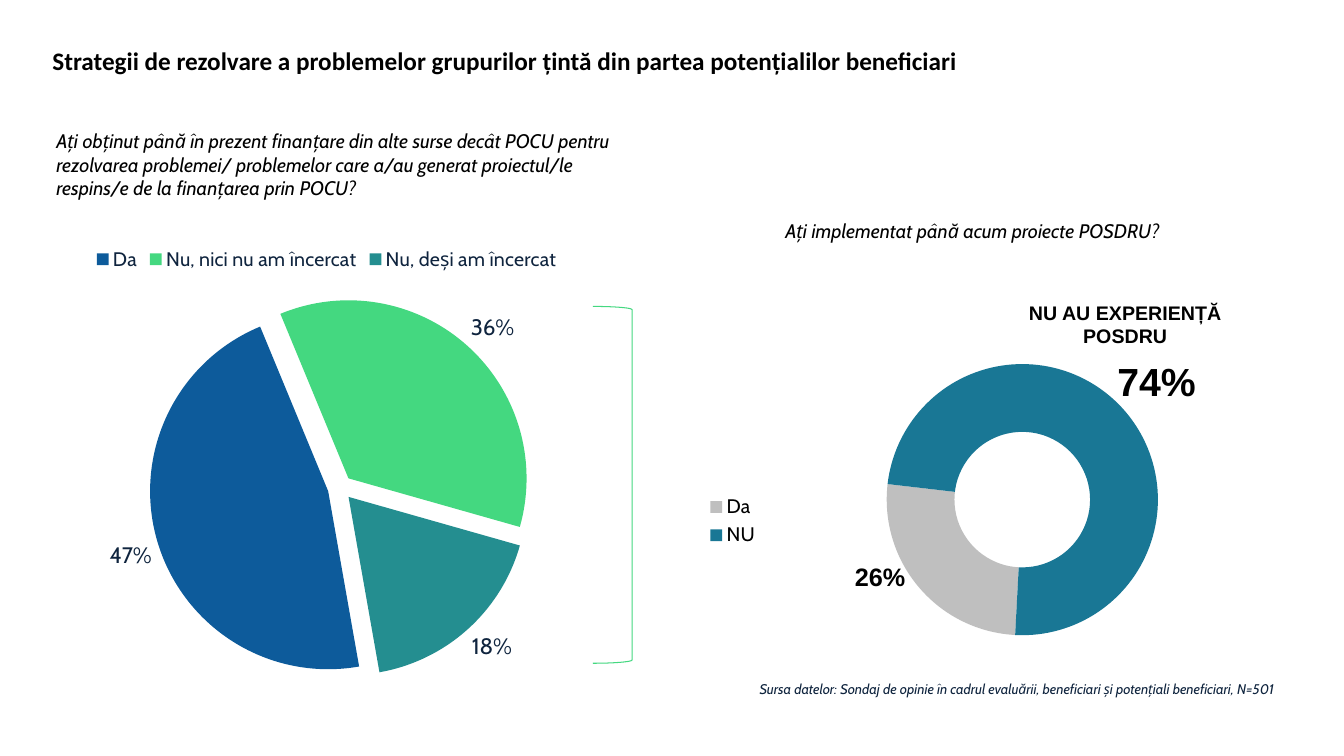
import dataclasses

import pptx
import pptx.chart.data
import pptx.dml.color
import pptx.enum.chart
import pptx.enum.shapes
import pptx.enum.text
import pptx.oxml
import pptx.oxml.ns
import pptx.util

PX = 9144
ALIGN = pptx.enum.text.PP_ALIGN
ANCHOR = pptx.enum.text.MSO_ANCHOR
LEGEND = pptx.enum.chart.XL_LEGEND_POSITION
CHART = pptx.enum.chart.XL_CHART_TYPE


@dataclasses.dataclass(frozen=True)
class Theme:
    black: str = "000000"
    navy: str = "0F243E"
    blue: str = "0D5B9B"
    green: str = "44D880"
    teal: str = "248E90"
    grey: str = "BFBFBF"
    petrol: str = "197795"
    body_font: str = "Cabin"
    title_font: str = "Calibri"
    callout_font: str = "Arial"
    note: int = 10
    body: int = 14
    label: int = 16
    title: int = 18
    big: int = 28


def px(*values):
    return [pptx.util.Emu(v * PX) for v in values]


def rgb(color):
    return pptx.dml.color.RGBColor.from_string(color)


def set_font(font, name, size, color, bold=False, italic=False):
    font.name = name
    font.size = pptx.util.Pt(size)
    font.color.rgb = rgb(color)
    font.bold = bold
    font.italic = italic


def write_text(tf, text, align=ALIGN.LEFT, **style):
    p = tf.paragraphs[0]
    p.alignment = align
    r = p.add_run()
    r.text = text
    set_font(r.font, **style)


def c_node(tag, inner="", **attrs):
    pairs = "".join(f' {k}="{v}"' for k, v in attrs.items())
    return pptx.oxml.parse_xml(
        f'<c:{tag} {pptx.oxml.ns.nsdecls("c")}{pairs}>{inner}</c:{tag}>')


class SlideBuilder:
    def __init__(self, prs, theme):
        self.theme = theme
        self.s = prs.slides.add_slide(prs.slide_layouts[6])

    def text(self, box, text, anchor=ANCHOR.TOP, inset=(10, 5), **style):
        tf = self.s.shapes.add_textbox(*px(*box)).text_frame
        tf.word_wrap = True
        tf.vertical_anchor = anchor
        tf.margin_left = tf.margin_right = px(inset[0])[0]
        tf.margin_top = tf.margin_bottom = px(inset[1])[0]
        write_text(tf, text, **style)

    def question(self, box, text):
        self.text(box, text, name=self.theme.body_font, size=self.theme.body,
                  color=self.theme.black, italic=True)

    def callout(self, box, text, size):
        self.text(box, text, anchor=ANCHOR.MIDDLE, inset=(0, 5), align=ALIGN.CENTER,
                  name=self.theme.callout_font, size=size,
                  color=self.theme.black, bold=True)

    def bracket(self, box, color):
        sp = self.s.shapes.add_shape(
            pptx.enum.shapes.MSO_SHAPE.RIGHT_BRACKET, *px(*box))
        sp.shadow.inherit = False
        sp.fill.background()
        sp.line.color.rgb = rgb(color)
        sp.line.width = pptx.util.Pt(0.75)

    def chart(self, kind, box, values, colors, start, legend, legend_color):
        data = pptx.chart.data.CategoryChartData()
        data.categories = list(values)
        data.add_series("Series 1", list(values.values()))
        chart = self.s.shapes.add_chart(kind, *px(*box), data).chart
        set_font(chart.font, self.theme.body_font, self.theme.note, self.theme.black)
        chart.has_title = False
        chart.has_legend = True
        chart.legend.position = legend
        chart.legend.include_in_layout = False
        set_font(chart.legend.font, self.theme.body_font, self.theme.body, legend_color)
        plot = chart.plots[0]
        plot.vary_by_categories = True
        plot.has_data_labels = False
        for i, color in enumerate(colors):
            fill = plot.series[0].points[i].format.fill
            fill.solid()
            fill.fore_color.rgb = rgb(color)
        group = chart._chartSpace.xpath("c:chart/c:plotArea/*[c:ser]")[0]
        for old in group.xpath("c:firstSliceAng | c:holeSize"):
            group.remove(old)
        group.append(c_node("firstSliceAng", val=start))
        return chart, group

    def pie(self, *args, explosion, **options):
        chart, group = self.chart(CHART.PIE, *args, **options)
        group.xpath("c:ser/c:dPt")[0].addprevious(c_node("explosion", val=explosion))
        labels = chart.plots[0].series[0].data_labels
        labels.show_value = True
        labels.number_format = "0%"
        labels.number_format_is_linked = False
        labels.position = pptx.enum.chart.XL_LABEL_POSITION.OUTSIDE_END
        set_font(labels.font, self.theme.body_font, self.theme.label, self.theme.navy)

    def doughnut(self, *args, hole, layout, **options):
        chart, group = self.chart(CHART.DOUGHNUT, *args, **options)
        group.append(c_node("holeSize", val=hole))
        area = group.getparent()
        for old in area.xpath("c:layout"):
            area.remove(old)
        modes = '<c:layoutTarget val="inner"/><c:xMode val="edge"/><c:yMode val="edge"/>'
        sizes = "".join(f'<c:{k} val="{v}"/>' for k, v in zip("xywh", layout))
        area.insert(0, c_node("layout", f"<c:manualLayout>{modes}{sizes}</c:manualLayout>"))


def main():
    prs = pptx.Presentation()
    prs.slide_width, prs.slide_height = px(1333, 750)
    t = Theme()
    s = SlideBuilder(prs, t)
    s.text((52, 21, 1200, 78),
           "Strategii de rezolvare a problemelor grupurilor țintă din partea "
           "potențialilor beneficiari",
           anchor=ANCHOR.MIDDLE, inset=(0, 0), name=t.title_font, size=t.title,
           color=t.black, bold=True)
    s.callout((1007, 293, 218, 57), "NU AU EXPERIENȚĂ POSDRU", t.body)
    s.pie((-24, 234, 696, 460),
          {"Da": 0.47, "Nu, nici nu am încercat": 0.36, "Nu, deși am încercat": 0.18},
          (t.blue, t.green, t.teal), start=170, legend=LEGEND.TOP,
          legend_color=t.navy, explosion=7)
    s.doughnut((690, 340, 480, 354), {"Da": 26, "NU": 74}, (t.grey, t.petrol),
               start=183, legend=LEGEND.LEFT, legend_color=t.black,
               hole=65, layout=(0.35, 0.06, 0.65, 0.76))
    s.question((46, 123, 602, 81),
               "Ați obținut până în prezent finanțare din alte surse decât POCU pentru "
               "rezolvarea problemei/ problemelor care a/au generat proiectul/le "
               "respins/e de la finanțarea prin POCU?")
    s.text((435, 670, 838, 27),
           "Sursa datelor: Sondaj de opinie în cadrul evaluării, beneficiari și "
           "potențiali beneficiari, N=501",
           align=ALIGN.RIGHT, name=t.body_font, size=t.note, color=t.navy, italic=True)
    s.bracket((588, 304, 39, 354), t.green)
    s.question((769, 212, 506, 34), "Ați implementat până acum proiecte POSDRU?")
    s.callout((1090, 349, 114, 57), "74%", t.big)
    s.callout((816, 552, 114, 40), "26%", t.title)
    prs.save("out.pptx")


if __name__ == "__main__":
    main()
